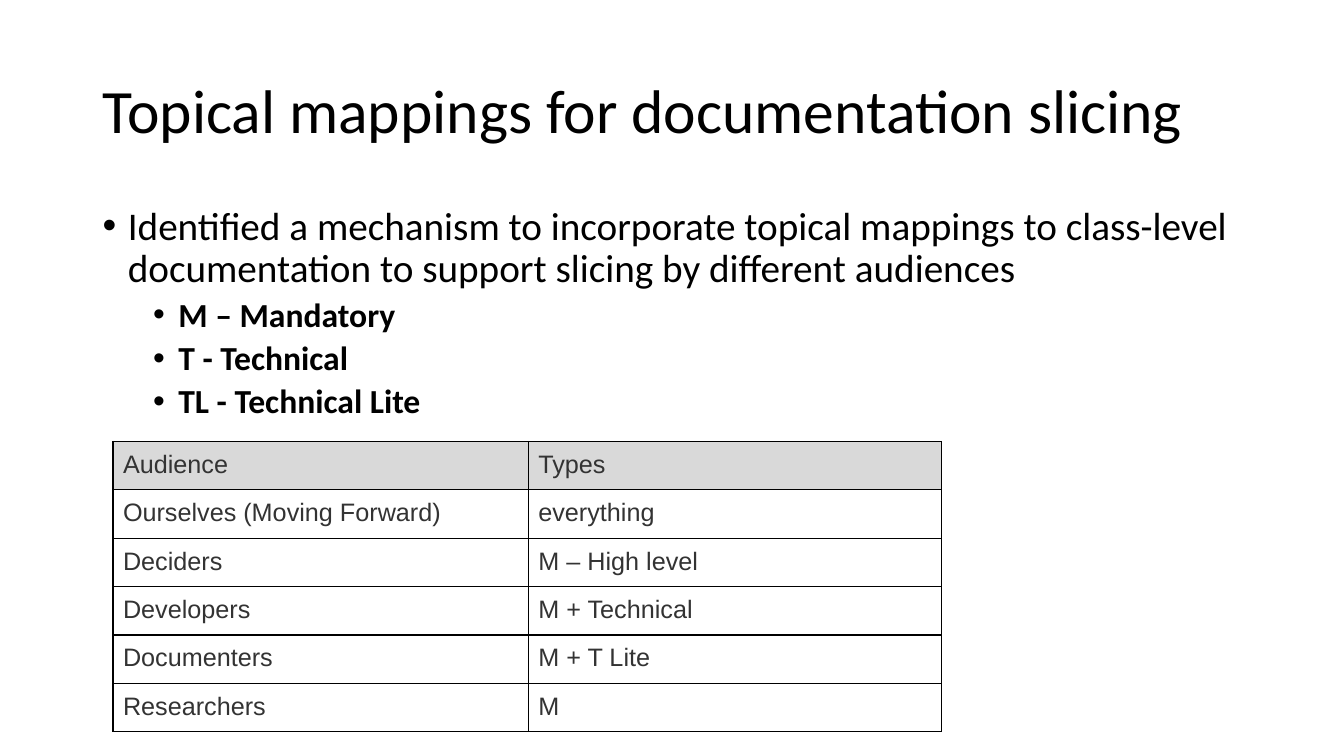
from dataclasses import dataclass
from lxml import etree
from pptx import Presentation
from pptx.dml.color import RGBColor
from pptx.enum import text
from pptx.oxml import ns
from pptx.util import Inches, Pt


@dataclass(frozen=True)
class Theme:
    black: str = "000000"
    gray: str = "333333"
    head: str = "D9D9D9"
    sans: str = "Calibri"
    grid: str = "Arial"
    title: int = 44
    body: int = 28
    sub: int = 24
    cell: int = 18


@dataclass(frozen=True)
class Line:
    words: str
    size: int
    bold: bool = False
    level: int = 0
    before: int = 0
    left: float = 0
    bullet: bool = True


THEME = Theme()
HEADING = [Line("Topical mappings for documentation slicing", THEME.title, bullet=False)]
BODY = [
    Line("Identified a mechanism to incorporate topical mappings to class-level "
         "documentation to support slicing by different audiences", THEME.body, before=10, left=0.25),
    *(Line(words, THEME.sub, True, 1, 5, 0.75)
      for words in ("M – Mandatory", "T - Technical", "TL - Technical Lite")),
]
ROWS = [
    ("Audience", "Types"),
    ("Ourselves (Moving Forward)", "everything"),
    ("Deciders", "M – High level"),
    ("Developers", "M + Technical"),
    ("Documenters", "M + T Lite"),
    ("Researchers", "M"),
]
WIDTHS = (4.12, 4.1)
HIGH = 0.475


def style(para, face: str, size: int, color: str, bold: bool = False) -> None:
    font = para.font
    font.name = face
    font.size = Pt(size)
    font.bold = bold
    font.color.rgb = RGBColor.from_string(color)


def add_bullet(para, left: float) -> None:
    props = para._p.get_or_add_pPr()
    props.set("marL", str(Inches(left)))
    props.set("indent", str(Inches(-0.25)))
    face = etree.Element(ns.qn("a:buFont"), typeface="Arial")
    mark = etree.Element(ns.qn("a:buChar"), char="•")
    props.insert_element_before(face, "a:tabLst", "a:defRPr", "a:extLst")
    props.insert_element_before(mark, "a:tabLst", "a:defRPr", "a:extLst")


def add_text(slide, lines: list[Line], top: float, high: float, anchor) -> None:
    box = slide.shapes.add_textbox(Inches(0.92), Inches(top), Inches(11.5), Inches(high))
    frame = box.text_frame
    frame.word_wrap = True
    frame.vertical_anchor = anchor
    for i, line in enumerate(lines):
        para = frame.add_paragraph() if i else frame.paragraphs[0]
        para.text = line.words
        para.level = line.level
        para.line_spacing = 0.9
        para.space_before = Pt(line.before)
        style(para, THEME.sans, line.size, THEME.black, line.bold)
        if line.bullet:
            add_bullet(para, line.left)


def add_border(cell) -> None:
    props = cell._tc.get_or_add_tcPr()
    for i, side in enumerate(("lnL", "lnR", "lnT", "lnB")):
        edge = etree.Element(ns.qn(f"a:{side}"), w=str(Pt(1)))
        fill = etree.SubElement(edge, ns.qn("a:solidFill"))
        etree.SubElement(fill, ns.qn("a:srgbClr"), val=THEME.black)
        props.insert(i, edge)


def add_grid(slide) -> None:
    frame = slide.shapes.add_table(len(ROWS), len(WIDTHS), Inches(1.12), Inches(4.38),
                                   Inches(sum(WIDTHS)), Inches(HIGH * len(ROWS)))
    table = frame.table
    table.horz_banding = False
    table.first_row = False
    for col, width in zip(table.columns, WIDTHS):
        col.width = Inches(width)
    for r, row in enumerate(ROWS):
        table.rows[r].height = Inches(HIGH)
        for c, words in enumerate(row):
            cell = table.cell(r, c)
            cell.text = words
            cell.margin_left = cell.margin_right = Inches(0.1)
            cell.margin_top = cell.margin_bottom = Inches(0.09)
            style(cell.text_frame.paragraphs[0], THEME.grid, THEME.cell, THEME.gray)
            if r:
                cell.fill.background()
            else:
                cell.fill.solid()
                cell.fill.fore_color.rgb = RGBColor.from_string(THEME.head)
            add_border(cell)


def main() -> None:
    deck = Presentation()
    deck.slide_width = Inches(13.33)
    deck.slide_height = Inches(7.5)
    slide = deck.slides.add_slide(deck.slide_layouts[6])
    add_text(slide, HEADING, 0.4, 1.45, text.MSO_ANCHOR.MIDDLE)
    add_text(slide, BODY, 2, 4.76, text.MSO_ANCHOR.TOP)
    add_grid(slide)
    deck.save("out.pptx")


if __name__ == "__main__":
    main()
